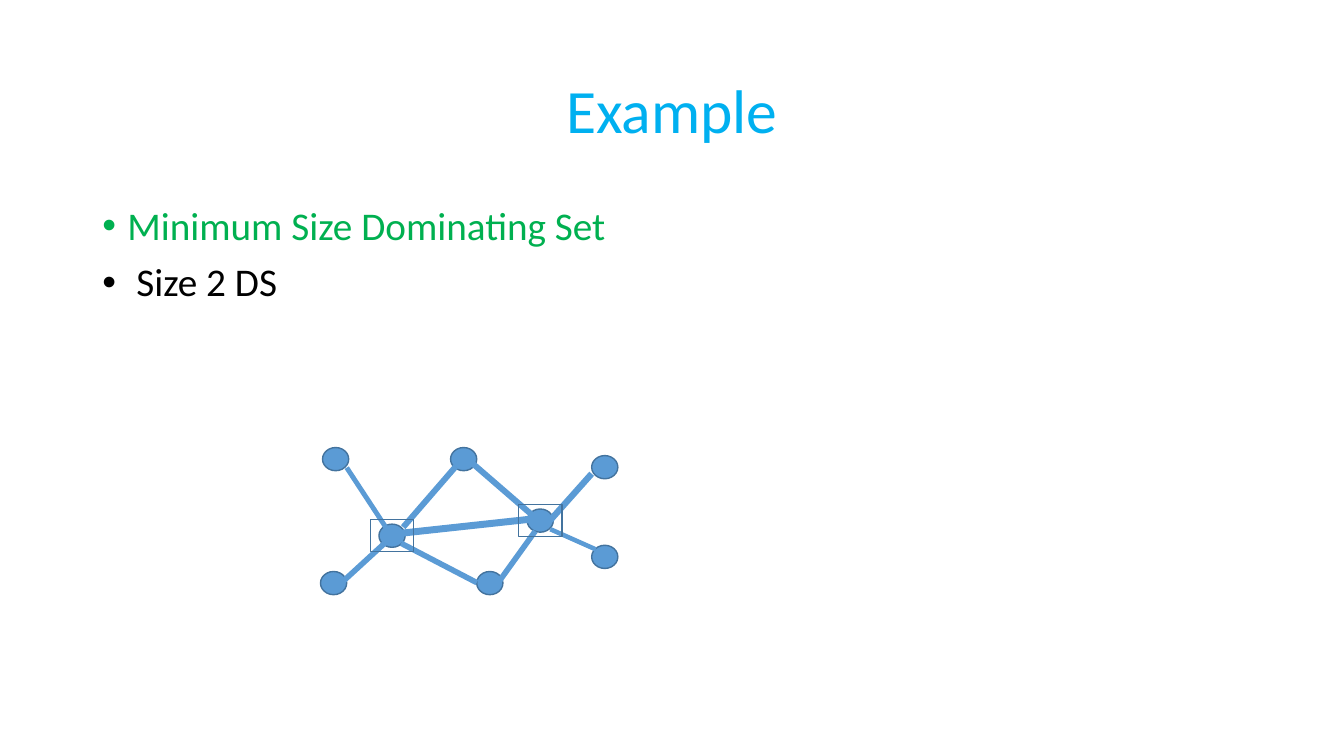
import pptx
import pptx.util
import pptx.dml.color
import pptx.enum.shapes
import pptx.enum.text
import pptx.oxml.ns
import lxml.etree

Pt = pptx.util.Pt
RGBColor = pptx.dml.color.RGBColor
MSO_SHAPE = pptx.enum.shapes.MSO_SHAPE
ANCHOR = pptx.enum.text.MSO_ANCHOR
ALIGN = pptx.enum.text.PP_ALIGN
qn = pptx.oxml.ns.qn

TITLE_BLUE = RGBColor(0x00, 0xB0, 0xF0)
HEADING_GREEN = RGBColor(0x00, 0xB0, 0x50)
BLACK = RGBColor(0x00, 0x00, 0x00)
NODE_BLUE = RGBColor(0x5B, 0x9B, 0xD5)
OUTLINE_BLUE = RGBColor(0x43, 0x73, 0x9E)

NODE_SIZE = (18.72, 16.56)
MARKER_SIZE = (31, 23)

# Node centres, in points
NODES = {
    "top left": (239.76, 327.96),
    "top middle": (331.2, 327.96),
    "left hub": (280.08, 382.68),
    "right hub": (385.92, 371.88),
    "bottom middle": (349.92, 416.52),
    "top right": (432, 333.72),
    "bottom right": (432, 397.8),
    "bottom left": (238.32, 416.52),
}
DOMINATING_SET = ("left hub", "right hub")

# Start, end and width of each edge, in points
EDGES = [
    ((247.68, 334.08), (277.92, 380.16), 3.5),
    ((244.08, 416.16), (278.64, 384.48), 4),
    ((288, 376.56), (325.44, 333.36), 4.25),
    ((331.92, 326.16), (380.16, 367.92), 4.25),
    ((393.12, 371.52), (422.64, 338.4), 4.5),
    ((286.56, 388.08), (340.56, 416.16), 4),
    ((286.56, 380.88), (379.44, 370.8), 5),
    ((393.12, 378), (425.52, 392.4), 3.25),
    ((382.32, 379.44), (356.4, 415.44), 4),
]


def add_text_frame(slide, left, top, width, height, anchor):
    frame = slide.shapes.add_textbox(Pt(left), Pt(top), Pt(width), Pt(height)).text_frame
    frame.word_wrap = True
    frame.vertical_anchor = anchor
    return frame


def write_text(paragraph, text, *, size, color, align=ALIGN.LEFT, before=0, bullet=False):
    paragraph.alignment = align
    paragraph.line_spacing = 0.9
    paragraph.space_before = Pt(before)
    run = paragraph.add_run()
    run.text = text
    run.font.name = "Calibri"
    run.font.size = Pt(size)
    run.font.color.rgb = color
    if bullet:
        properties = paragraph._p.get_or_add_pPr()
        properties.set("marL", str(Pt(18)))
        properties.set("indent", str(-Pt(18)))
        lxml.etree.SubElement(properties, qn("a:buFont")).set("typeface", "Arial")
        lxml.etree.SubElement(properties, qn("a:buChar")).set("char", "•")


def add_centred_shape(slide, kind, centre, size, fill=None):
    (x, y), (width, height) = centre, size
    shape = slide.shapes.add_shape(
        kind, Pt(x - width / 2), Pt(y - height / 2), Pt(width), Pt(height))
    shape.shadow.inherit = False
    if fill is None:
        shape.fill.background()
    else:
        shape.fill.solid()
        shape.fill.fore_color.rgb = fill
    shape.line.color.rgb = OUTLINE_BLUE
    shape.line.width = Pt(1)


def add_edge(slide, start, end, width):
    edge = slide.shapes.add_connector(
        pptx.enum.shapes.MSO_CONNECTOR.STRAIGHT, *(Pt(v) for v in start + end))
    edge.line.color.rgb = NODE_BLUE
    edge.line.width = Pt(width)
    lxml.etree.SubElement(edge._element.spPr, qn("a:effectLst"))


def main():
    deck = pptx.Presentation()
    deck.slide_width, deck.slide_height = Pt(960), Pt(540)
    slide = deck.slides.add_slide(deck.slide_layouts[6])

    # Title
    title = add_text_frame(slide, 66, 28.8, 828, 104.4, ANCHOR.MIDDLE)
    write_text(title.paragraphs[0], "Example", size=44, color=TITLE_BLUE, align=ALIGN.CENTER)

    # Bullets
    body = add_text_frame(slide, 66, 144, 828, 342.6, ANCHOR.TOP)
    write_text(body.paragraphs[0], "Minimum Size Dominating Set",
               size=28, color=HEADING_GREEN, before=10, bullet=True)
    write_text(body.add_paragraph(), " Size 2 DS",
               size=28, color=BLACK, before=10, bullet=True)

    # Graph
    for centre in NODES.values():
        add_centred_shape(slide, MSO_SHAPE.OVAL, centre, NODE_SIZE, NODE_BLUE)
    for start, end, width in EDGES:
        add_edge(slide, start, end, width)

    # Frames around the dominating nodes
    for name in DOMINATING_SET:
        add_centred_shape(slide, MSO_SHAPE.RECTANGLE, NODES[name], MARKER_SIZE)

    deck.save("out.pptx")


if __name__ == "__main__":
    main()
